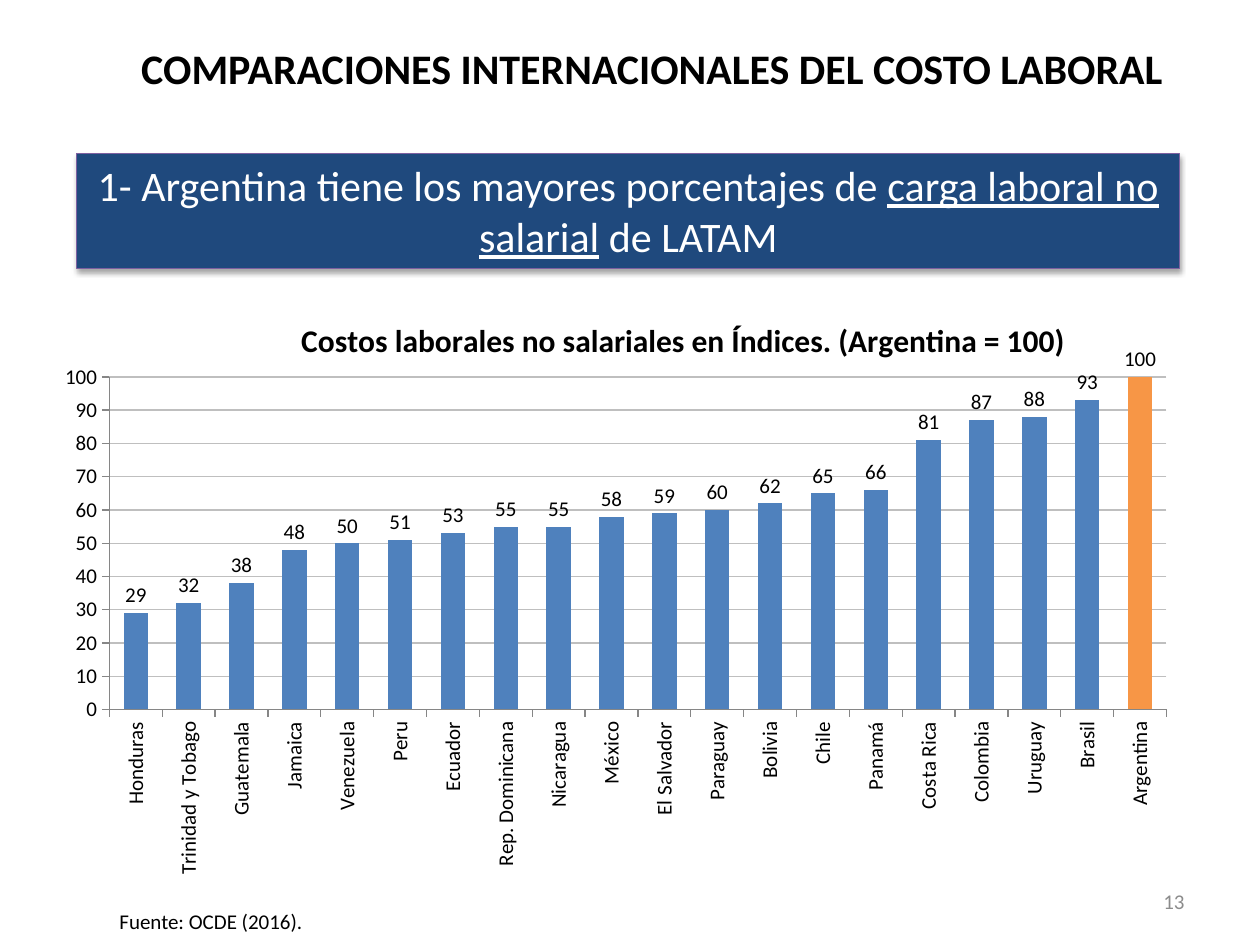
from dataclasses import dataclass
from lxml import etree
from pptx import Presentation
from pptx import util as u
from pptx.chart.data import CategoryChartData
from pptx.dml.color import RGBColor
from pptx.enum import chart as charts, shapes, text
from pptx.oxml import parse_xml
from pptx.oxml.ns import nsdecls, qn


@dataclass(frozen=True)
class Theme:
    font: str = "Calibri"
    ink: str = "000000"
    white: str = "FFFFFF"
    muted: str = "8C8C8C"
    banner: str = "1F497D"
    banner_line: str = "7D60A0"
    bar: str = "4F81BD"
    highlight: str = "F79646"
    grid: str = "BFBFBF"
    axis: str = "868686"
    heading: int = 24
    chart_title: int = 18
    small: int = 12


@dataclass(frozen=True)
class Area:
    left: float
    top: float
    width: float
    height: float

    def lengths(self) -> list:
        return [u.Cm(n) for n in (self.left, self.top, self.width, self.height)]


@dataclass(frozen=True)
class Span:
    words: str
    underline: bool = False


@dataclass(frozen=True)
class Label:
    area: Area
    spans: tuple
    size: int
    color: str
    bold: bool = False
    align: text.PP_ALIGN = text.PP_ALIGN.CENTER
    anchor: text.MSO_ANCHOR = text.MSO_ANCHOR.TOP
    wrap: bool = True


THEME = Theme()

TITLE = Label(Area(0.89, 0.74, 24.51, 1.27),
              (Span("COMPARACIONES INTERNACIONALES DEL COSTO LABORAL"),),
              THEME.heading, THEME.ink, bold=True)
BANNER = Label(Area(1.55, 3.1, 22.23, 2.31),
               (Span("1- Argentina tiene los mayores porcentajes de "),
                Span("carga laboral no salarial", underline=True),
                Span(" de LATAM")),
               THEME.heading, THEME.white)
SOURCE = Label(Area(2.11, 18.19, 4.29, 0.76), (Span("Fuente: OCDE (2016)."),),
               THEME.small, THEME.ink, wrap=False)
PAGE_NUMBER = Label(Area(18.21, 17.65, 5.92, 1.02), (Span("13"),),
                    THEME.small, THEME.muted, align=text.PP_ALIGN.RIGHT,
                    anchor=text.MSO_ANCHOR.MIDDLE)

CHART_AREA = Area(0.53, 5.38, 23.6, 13.28)
CHART_TITLE = "Costos laborales no salariales en Índices. (Argentina = 100)"
COSTS = {
    "Honduras": 29, "Trinidad y Tobago": 32, "Guatemala": 38, "Jamaica": 48,
    "Venezuela": 50, "Peru": 51, "Ecuador": 53, "Rep. Dominicana": 55,
    "Nicaragua": 55, "México": 58, "El Salvador": 59, "Paraguay": 60,
    "Bolivia": 62, "Chile": 65, "Panamá": 66, "Costa Rica": 81,
    "Colombia": 87, "Uruguay": 88, "Brasil": 93, "Argentina": 100,
}


def style_font(font, size: int, color: str, **extra) -> None:
    for name, value in {"name": THEME.font, "size": u.Pt(size), **extra}.items():
        setattr(font, name, value)
    font.color.rgb = RGBColor.from_string(color)


def paint(fill, color: str) -> None:
    fill.solid()
    fill.fore_color.rgb = RGBColor.from_string(color)


def style_line(line, color: str) -> None:
    line.color.rgb = RGBColor.from_string(color)
    line.width = u.Pt(0.75)


def write(box, label: Label) -> None:
    frame = box.text_frame
    frame.word_wrap = label.wrap
    frame.vertical_anchor = label.anchor
    para = frame.paragraphs[0]
    para.alignment = label.align
    for span in label.spans:
        run = para.add_run()
        run.text = span.words
        style_font(run.font, label.size, label.color, bold=label.bold,
                   underline=span.underline)


def add_label(page, label: Label) -> None:
    write(page.shapes.add_textbox(*label.area.lengths()), label)


def add_banner(page, label: Label) -> None:
    box = page.shapes.add_shape(shapes.MSO_SHAPE.RECTANGLE, *label.area.lengths())
    paint(box.fill, THEME.banner)
    style_line(box.line, THEME.banner_line)
    box.shadow.inherit = False
    effects = box._element.spPr.find(qn("a:effectLst"))
    effects.append(parse_xml(
        f'<a:outerShdw {nsdecls("a")} blurRad="{u.Pt(3.1)}" dist="{u.Pt(1.8)}" '
        'dir="5400000" rotWithShape="0"><a:srgbClr val="000000">'
        '<a:alpha val="35000"/></a:srgbClr></a:outerShdw>'))
    write(box, label)


def replace_child(parent, tag: str, index: int):
    """Put a fresh child at its place in the schema order."""
    for old in parent.findall(qn(tag)):
        parent.remove(old)
    child = etree.Element(qn(tag))
    parent.insert(index, child)
    return child


def set_layout(parent, index: int, **values) -> None:
    """Give a chart part a manual layout, as fractions of the chart."""
    layout = replace_child(parent, "c:layout", index)
    manual = etree.SubElement(layout, qn("c:manualLayout"))
    for name, value in values.items():
        etree.SubElement(manual, qn(f"c:{name}")).set("val", str(value))


def add_cost_chart(page) -> None:
    data = CategoryChartData(number_format="#,##0")
    data.categories = list(COSTS)
    data.add_series("Series 1", list(COSTS.values()))
    chart = page.shapes.add_chart(charts.XL_CHART_TYPE.COLUMN_CLUSTERED,
                                  *CHART_AREA.lengths(), data).chart
    style_font(chart.font, THEME.small, THEME.ink)
    chart.has_legend = False

    # Chart title, laid over the plot
    title = chart.chart_title
    title.text_frame.text = CHART_TITLE
    style_font(title.text_frame.paragraphs[0].runs[0].font,
               THEME.chart_title, THEME.ink, bold=True)
    set_layout(title._element, 1, xMode="edge", yMode="edge", x=0.23, y=0.07)
    replace_child(title._element, "c:overlay", 2).set("val", "1")
    set_layout(chart._chartSpace.chart.plotArea, 0, layoutTarget="inner",
               xMode="edge", yMode="edge", x=0.071, y=0.167, w=0.903, h=0.505)

    # Bars, with the last country highlighted
    plot = chart.plots[0]
    plot.gap_width = 116
    plot.vary_by_categories = False
    series = plot.series[0]
    paint(series.format.fill, THEME.bar)
    paint(series.points[len(COSTS) - 1].format.fill, THEME.highlight)
    labels = series.data_labels
    for name, value in {"show_value": True, "number_format": "#,##0",
                        "number_format_is_linked": False,
                        "position": charts.XL_LABEL_POSITION.OUTSIDE_END}.items():
        setattr(labels, name, value)
    style_font(labels.font, THEME.small, THEME.ink)

    # Axes
    for axis in (chart.category_axis, chart.value_axis):
        axis.major_tick_mark = charts.XL_TICK_MARK.OUTSIDE
        style_font(axis.tick_labels.font, THEME.small, THEME.ink)
        style_line(axis.format.line, THEME.axis)
    names = chart.category_axis._element.find(qn("c:txPr")).find(qn("a:bodyPr"))
    names.set("rot", "-5400000")
    names.set("vert", "horz")
    values = chart.value_axis
    values.minimum_scale, values.maximum_scale, values.major_unit = 0, 100, 10
    values.has_major_gridlines = True
    style_line(values.major_gridlines.format.line, THEME.grid)


def main() -> None:
    deck = Presentation()
    deck.slide_width, deck.slide_height = u.Cm(25.4), u.Cm(19.05)
    page = deck.slides.add_slide(deck.slide_layouts[6])
    for label in (PAGE_NUMBER, TITLE, SOURCE):
        add_label(page, label)
    add_banner(page, BANNER)
    add_cost_chart(page)
    deck.save("out.pptx")


if __name__ == "__main__":
    main()
